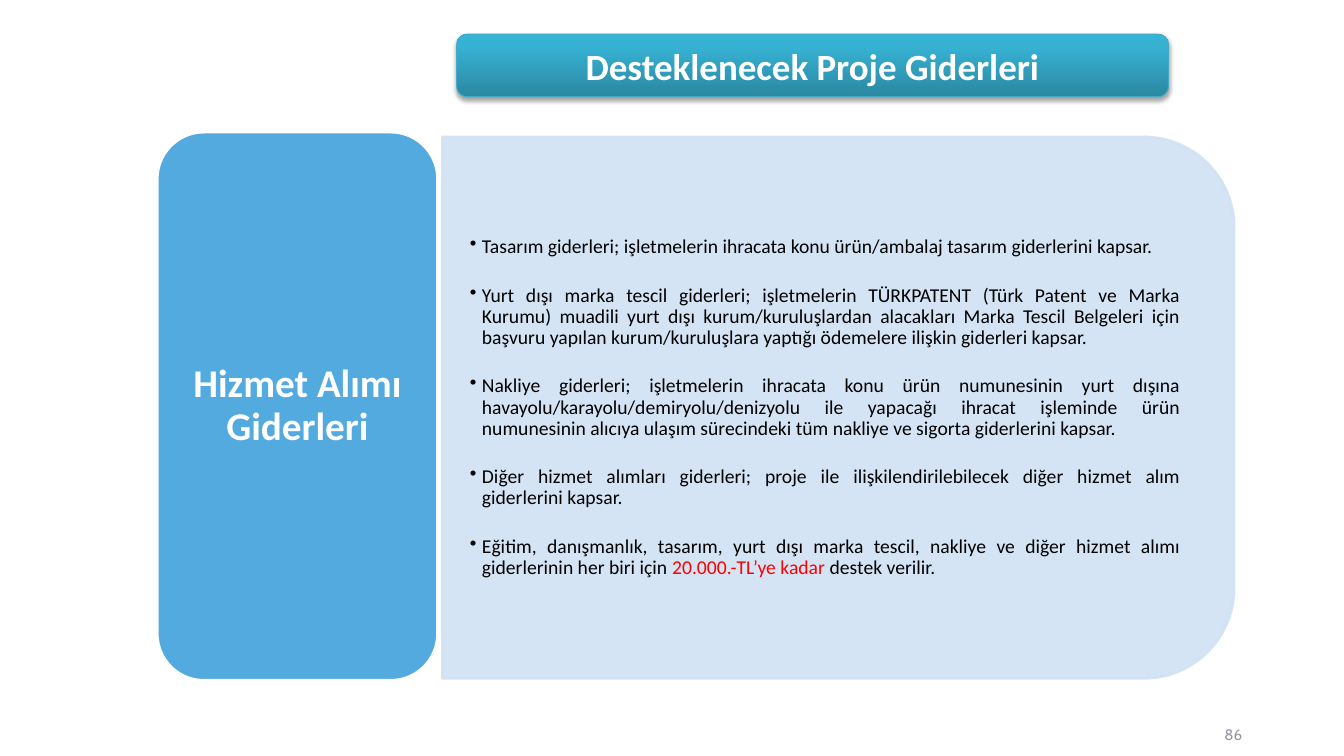
from dataclasses import dataclass
from typing import Any

import lxml.etree
import pptx
import pptx.dml.color
import pptx.enum.shapes
import pptx.enum.text
import pptx.oxml.ns
import pptx.util

SHAPES = pptx.enum.shapes.MSO_SHAPE
ALIGN = pptx.enum.text.PP_ALIGN
MIDDLE = pptx.enum.text.MSO_ANCHOR.MIDDLE
WIDTH, HEIGHT = pptx.util.Inches(13.33), pptx.util.Inches(7.5)


@dataclass(frozen=True)
class Theme:
    font: str = "Calibri"
    number_font: str = "Cabin"
    white: str = "FFFFFF"
    ink: str = "000000"
    accent: str = "FF0000"
    grey: str = "9499A1"
    label: str = "52AADF"
    panel: str = "D1E2F3"
    title_edge: str = "46AAC5"
    title_stops: tuple = ((0, "2A88A2"), (80, "37B1D2"), (100, "34B4D6"))
    title_size: float = 26.4
    label_size: float = 28
    body_size: float = 14
    number_size: float = 10.8
    body_gap: float = 19.5


THEME = Theme()


@dataclass(frozen=True)
class Area:
    """A rectangle in percent of the slide's width and height."""
    left: float
    top: float
    width: float
    height: float

    def lengths(self) -> tuple[int, int, int, int]:
        return (int(WIDTH * self.left / 100), int(HEIGHT * self.top / 100),
                int(WIDTH * self.width / 100), int(HEIGHT * self.height / 100))


@dataclass(frozen=True)
class Piece:
    text: str
    color: str


@dataclass(frozen=True)
class TextStyle:
    size: float
    align: Any
    inset: tuple[float, float]
    font: str = THEME.font
    bold: bool = False
    spacing: float = 1.0
    gap: float = 0
    bullet: str = ""


def apply(target: Any, values: dict[str, Any]) -> None:
    for name, value in values.items():
        setattr(target, name, value)


def rgb(color: str) -> pptx.dml.color.RGBColor:
    return pptx.dml.color.RGBColor.from_string(color)


def add_node(parent: Any, tag: str, **attributes: Any) -> Any:
    return lxml.etree.SubElement(parent, pptx.oxml.ns.qn(tag),
                                 {name: str(value) for name, value in attributes.items()})


def add_block(slide: Any, kind: Any, box: tuple[int, int, int, int],
              fill: str, edge: str, edge_width: float) -> Any:
    block = slide.shapes.add_shape(kind, *box)
    block.shadow.inherit = False
    block.fill.solid()
    block.fill.fore_color.rgb = rgb(fill)
    block.line.color.rgb = rgb(edge)
    block.line.width = pptx.util.Pt(edge_width)
    return block


def write(holder: Any, paragraphs: list[list[Piece]], style: TextStyle) -> None:
    frame = holder.text_frame
    side, end = (pptx.util.Inches(length) for length in style.inset)
    apply(frame, {"word_wrap": True, "vertical_anchor": MIDDLE,
                  "margin_left": side, "margin_right": side,
                  "margin_top": end, "margin_bottom": end})
    for index, pieces in enumerate(paragraphs):
        paragraph = frame.add_paragraph() if index else frame.paragraphs[0]
        if style.bullet:
            properties = paragraph._p.get_or_add_pPr()
            indent = pptx.util.Inches(0.12)
            apply_indent = {"marL": indent, "indent": -indent}
            for name, value in apply_indent.items():
                properties.set(name, str(int(value)))
            add_node(properties, "a:buChar", char=style.bullet)
        apply(paragraph, {"alignment": style.align, "line_spacing": style.spacing})
        if index:
            paragraph.space_before = pptx.util.Pt(style.gap)
        for piece in pieces:
            run = paragraph.add_run()
            run.text = piece.text
            apply(run.font, {"name": style.font, "size": pptx.util.Pt(style.size),
                             "bold": style.bold})
            run.font.color.rgb = rgb(piece.color)


def shade_title(title: Any) -> None:
    title.fill.gradient()
    title.fill.gradient_angle = 90
    stops = title.element.xpath(".//a:gsLst")[0]
    for stop in list(stops):
        stops.remove(stop)
    for position, color in THEME.title_stops:
        add_node(add_node(stops, "a:gs", pos=position * 1000), "a:srgbClr", val=color)
    effects = title.element.xpath("./p:spPr/a:effectLst")[0]
    shadow = add_node(effects, "a:outerShdw", blurRad=int(pptx.util.Pt(3.1)),
                      dist=int(pptx.util.Pt(1.8)), dir=5400000, rotWithShape=0)
    add_node(add_node(shadow, "a:srgbClr", val=THEME.ink), "a:alpha", val=35000)


def turned(box: tuple[int, int, int, int]) -> tuple[int, int, int, int]:
    """The box that covers the given one after a quarter turn."""
    left, top, width, height = box
    shift = (width - height) // 2
    return left + shift, top - shift, height, width


TITLE = Area(33.98, 4.53, 52.96, 8.27)
LABEL = Area(11.7, 17.47, 20.86, 72.53)
PANEL = Area(32.93, 18.13, 58.89, 71.6)
EXPENSES = Area(32.93, 21.6, 56.94, 64.67)
PAGE_NUMBER = Area(69.69, 94.53, 23.33, 5.33)

EXPENSE_ITEMS = [
    "Tasarım giderleri; işletmelerin ihracata konu ürün/ambalaj tasarım giderlerini kapsar.",
    "Yurt dışı marka tescil giderleri; işletmelerin TÜRKPATENT (Türk Patent ve Marka Kurumu) "
    "muadili yurt dışı kurum/kuruluşlardan alacakları Marka Tescil Belgeleri için başvuru "
    "yapılan kurum/kuruluşlara yaptığı ödemelere ilişkin giderleri kapsar.",
    "Nakliye giderleri; işletmelerin ihracata konu ürün numunesinin yurt dışına "
    "havayolu/karayolu/demiryolu/denizyolu ile yapacağı ihracat işleminde ürün numunesinin "
    "alıcıya ulaşım sürecindeki tüm nakliye ve sigorta giderlerini kapsar.",
    "Diğer hizmet alımları giderleri; proje ile ilişkilendirilebilecek diğer hizmet alım "
    "giderlerini kapsar.",
]
SUPPORT_LIMIT = [
    Piece("Eğitim, danışmanlık, tasarım, yurt dışı marka tescil, nakliye ve diğer hizmet "
          "alımı giderlerinin her biri için ", THEME.ink),
    Piece("20.000.-TL’ye kadar", THEME.accent),
    Piece(" destek verilir.", THEME.ink),
]


def main() -> None:
    deck = pptx.Presentation()
    apply(deck, {"slide_width": WIDTH, "slide_height": HEIGHT})
    slide = deck.slides.add_slide(deck.slide_layouts[6])

    # Page number
    number = slide.shapes.add_textbox(*PAGE_NUMBER.lengths())
    write(number, [[Piece("86", THEME.grey)]],
          TextStyle(THEME.number_size, ALIGN.RIGHT, (0.08, 0.04), font=THEME.number_font))

    # Title bar
    title = add_block(slide, SHAPES.ROUNDED_RECTANGLE, TITLE.lengths(),
                      THEME.label, THEME.title_edge, 0.75)
    shade_title(title)
    write(title, [[Piece("Desteklenecek Proje Giderleri", THEME.white)]],
          TextStyle(THEME.title_size, ALIGN.CENTER, (0.11, 0.06), bold=True))

    # Translucent panel, rounded on its right side
    panel = add_block(slide, SHAPES.ROUND_2_SAME_RECTANGLE, turned(PANEL.lengths()),
                      THEME.panel, THEME.panel, 2)
    panel.rotation = 90
    for color in panel.element.xpath("./p:spPr//a:srgbClr"):
        add_node(color, "a:alpha", val=90000)

    # Expense list
    expenses = slide.shapes.add_textbox(*EXPENSES.lengths())
    write(expenses, [[Piece(item, THEME.ink)] for item in EXPENSE_ITEMS] + [SUPPORT_LIMIT],
          TextStyle(THEME.body_size, ALIGN.JUSTIFY, (0.27, 0.14),
                    spacing=0.9, gap=THEME.body_gap, bullet="•"))

    # Category label
    label = add_block(slide, SHAPES.ROUNDED_RECTANGLE, LABEL.lengths(),
                      THEME.label, THEME.white, 2)
    write(label, [[Piece("Hizmet Alımı Giderleri", THEME.white)]],
          TextStyle(THEME.label_size, ALIGN.CENTER, (0.12, 0.06), bold=True, spacing=0.9))

    deck.save("out.pptx")


if __name__ == "__main__":
    main()
